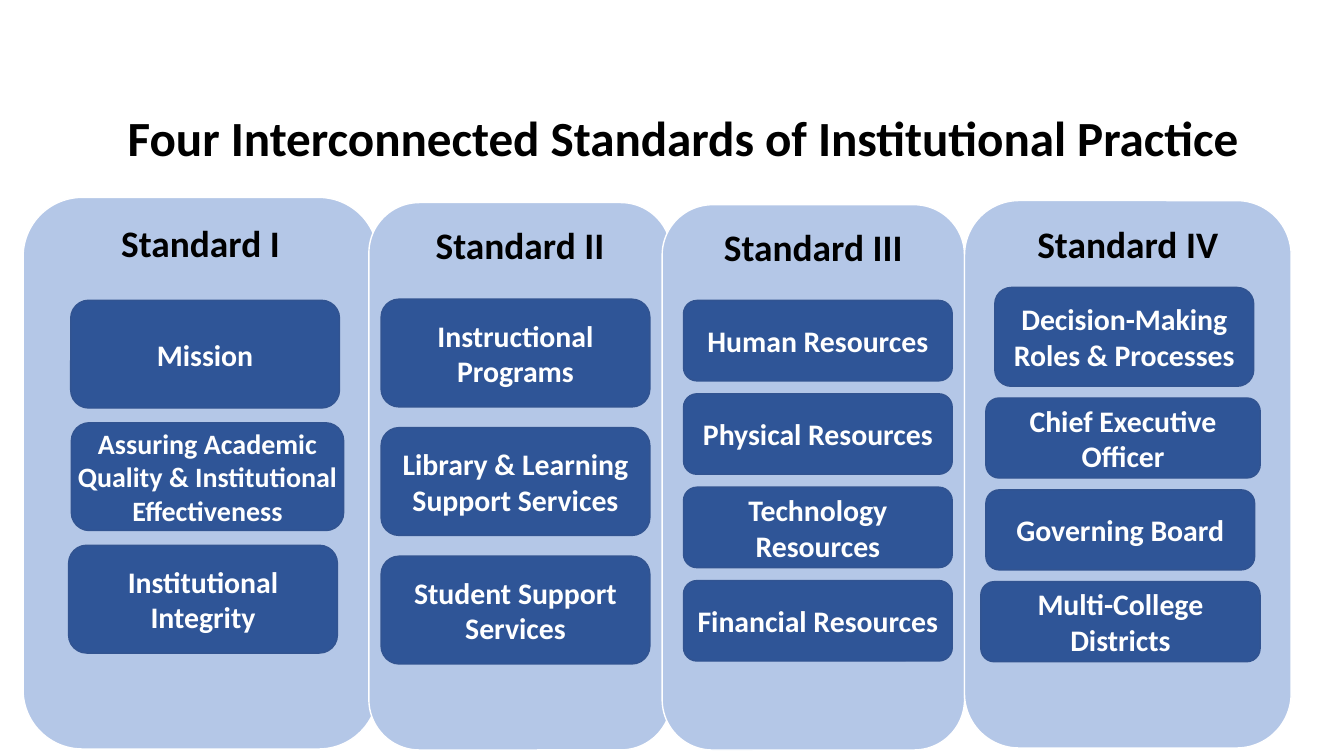
from pptx import Presentation
from pptx.dml.color import RGBColor
from pptx.enum import shapes, text
from pptx.util import Pt

COLOURS = {"panel": "B4C7E7", "panel_line": "FFFFFF", "card": "2F5597",
           "card_line": "325491", "dark": "000000", "light": "FFFFFF"}
FONT = "Calibri"

# Panel: heading, box, first card's distance from the top, gap between cards.
# Card: text, distance from the panel's left, width, height, text size.
STANDARDS = [
    ("Standard I", (16.5, 141, 253.5, 394), 73.5, 10.5, [
        ("Mission", 34, 192, 77, 21.3),
        ("Assuring Academic Quality & Institutional Effectiveness", 34.5, 194.5, 77, 20),
        ("Institutional Integrity", 32.5, 192, 77, 21.3)]),
    ("Standard II", (263.5, 144.7, 216, 391), 69, 14.8, [
        ("Instructional Programs", 8.7, 192, 77, 21.3),
        ("Library & Learning Support Services", 8.7, 192, 77, 21.3),
        ("Student Support Services", 8.7, 192, 77, 21.3)]),
    ("Standard III", (473, 146.2, 216, 389.5), 68.4, 9.2, [
        ("Human Resources", 15.2, 192, 57.5, 21.3),
        ("Physical Resources", 15.2, 192, 57.5, 21.3),
        ("Technology Resources", 15.2, 192, 57.5, 21.3),
        ("Financial Resources", 15.2, 192, 57.5, 21.3)]),
    ("Standard IV", (689, 143.3, 233.3, 391), 62, 8.4, [
        ("Decision-Making Roles & Processes", 21.6, 185, 70.6, 21.3),
        ("Chief Executive Officer", 15.2, 196, 57.2, 21.3),
        ("Governing Board", 15.2, 192, 57.2, 21.3),
        ("Multi-College Districts", 11.6, 199.5, 57.2, 21.3)]),
]


def colour(name):
    """Return the named colour."""
    return RGBColor.from_string(COLOURS[name])


def write(shape, words, size, ink, anchor):
    """Put one bold centred paragraph in a shape."""
    frame = shape.text_frame
    frame.text = words
    frame.word_wrap = True
    frame.auto_size = text.MSO_AUTO_SIZE.NONE
    frame.vertical_anchor = anchor
    paragraph = frame.paragraphs[0]
    paragraph.alignment = text.PP_ALIGN.CENTER
    font = paragraph.runs[0].font
    font.name, font.size, font.bold = FONT, Pt(size), True
    font.color.rgb = colour(ink)
    return frame


def add_box(slide, box, fill):
    """Add a rounded rectangle with its outline."""
    shape = slide.shapes.add_shape(
        shapes.MSO_SHAPE.ROUNDED_RECTANGLE, *(Pt(length) for length in box))
    shape.shadow.inherit = False
    shape.fill.solid()
    shape.fill.fore_color.rgb = colour(fill)
    shape.line.color.rgb = colour(fill + "_line")
    shape.line.width = Pt(1)
    return shape


def add_title(slide, box, words):
    """Place and format the title."""
    title = slide.shapes.title
    title.left, title.top, title.width, title.height = (Pt(length) for length in box)
    frame = write(title, words, 35.1, "dark", text.MSO_ANCHOR.MIDDLE)
    frame.paragraphs[0].line_spacing = 0.9


def add_panel(slide, box, heading):
    """Add the panel of one standard."""
    write(add_box(slide, box, "panel"), heading, 26.7, "dark", text.MSO_ANCHOR.TOP)


def add_cards(slide, box, offset, gap, cards):
    """Stack the cards of one standard down its panel."""
    left, top = box[:2]
    top += offset
    for words, indent, width, height, size in cards:
        card = add_box(slide, (left + indent, top, width, height), "card")
        frame = write(card, words, size, "light", text.MSO_ANCHOR.MIDDLE)
        frame.margin_left = frame.margin_right = 0
        frame.margin_top = frame.margin_bottom = 0
        top += height + gap


def main():
    """Build and save the slide."""
    presentation = Presentation()
    presentation.slide_width, presentation.slide_height = Pt(960), Pt(540)
    slide = presentation.slides.add_slide(presentation.slide_layouts[5])
    add_title(slide, (74, 77, 828, 47),
              "Four Interconnected Standards of Institutional Practice")
    for heading, box, *_ in STANDARDS:
        add_panel(slide, box, heading)
    for _, box, offset, gap, cards in STANDARDS:
        add_cards(slide, box, offset, gap, cards)
    presentation.save("out.pptx")


if __name__ == "__main__":
    main()
